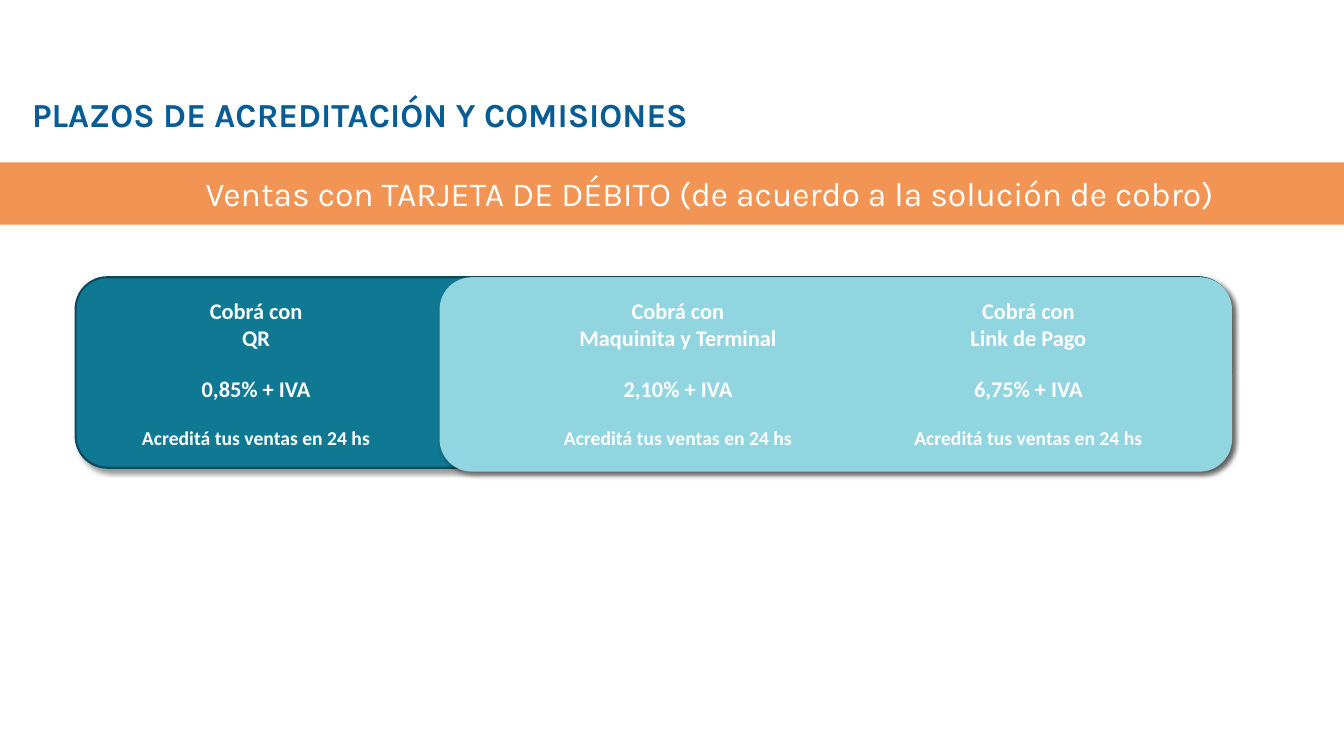
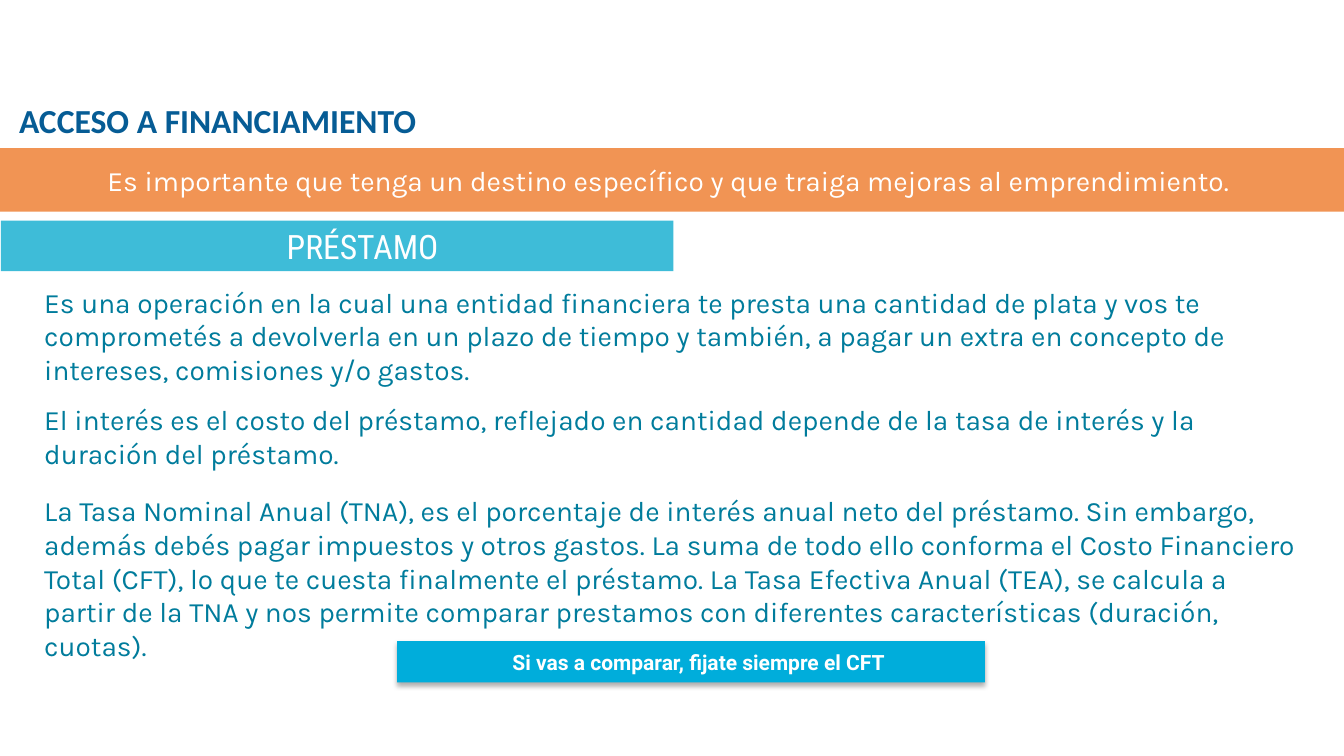
from dataclasses import dataclass

from lxml.etree import SubElement
from pptx import Presentation
from pptx.dml.color import RGBColor
from pptx.enum.shapes import MSO_SHAPE
from pptx.enum.text import MSO_ANCHOR, PP_ALIGN
from pptx.oxml.ns import qn
from pptx.util import Inches, Pt


@dataclass(frozen=True)
class Theme:
    white: str = "FFFFFF"
    navy: str = "065C95"
    orange: str = "F19454"
    teal: str = "0F7994"
    teal_edge: str = "104760"
    aqua: str = "90D5E0"
    turquoise: str = "3EBCD8"
    sky: str = "00ADDB"
    body_text: str = "007C9C"
    heading_font: str = "Karla"
    card_font: str = "Calibri"
    label_font: str = "Roboto Condensed"
    callout_font: str = "Roboto"
    title_size: int = 24
    body_size: int = 20
    card_size: int = 16
    callout_size: int = 15
    small_size: int = 14


class Deck:
    def __init__(self, theme):
        self.theme = theme
        self.presentation = Presentation()
        self.presentation.slide_width = Inches(13.33)
        self.presentation.slide_height = Inches(7.5)
        self.slide = None

    def new_slide(self):
        self.slide = self.presentation.slides.add_slide(self.presentation.slide_layouts[6])

    def panel(self, box, fill, kind=MSO_SHAPE.RECTANGLE, edge=None, shadow=None):
        shape = self.slide.shapes.add_shape(kind, *map(Inches, box))
        shape.fill.solid()
        shape.fill.fore_color.rgb = RGBColor.from_string(fill)
        if edge:
            shape.line.color.rgb = RGBColor.from_string(edge)
            shape.line.width = Pt(1.5)
        else:
            shape.line.fill.background()
        shape.shadow.inherit = False
        if shadow:
            self.add_shadow(shape, *shadow)
        return shape

    def add_shadow(self, shape, opacity, blur, distance, angle):
        effects = shape._element.spPr.find(qn("a:effectLst"))
        outer = SubElement(effects, qn("a:outerShdw"), blurRad=str(Pt(blur)),
                           dist=str(Pt(distance)), dir=str(angle * 60000),
                           algn="tl", rotWithShape="0")
        color = SubElement(outer, qn("a:srgbClr"), val="000000")
        SubElement(color, qn("a:alpha"), val=str(opacity * 1000))

    def text_box(self, box):
        return self.slide.shapes.add_textbox(*map(Inches, box))

    def set_text(self, shape, lines, font, color, bold=False, align=PP_ALIGN.CENTER,
                 anchor=MSO_ANCHOR.MIDDLE, left=0.1, right=0.1):
        frame = shape.text_frame
        frame.word_wrap = True
        frame.vertical_anchor = anchor
        frame.margin_left, frame.margin_right = Inches(left), Inches(right)
        for index, (text, size, space_before) in enumerate(lines):
            paragraph = frame.add_paragraph() if index else frame.paragraphs[0]
            paragraph.text = text
            paragraph.alignment = align
            if space_before:
                paragraph.space_before = Pt(space_before)
            paragraph.font.name = font
            paragraph.font.size = Pt(size)
            paragraph.font.bold = bold
            paragraph.font.color.rgb = RGBColor.from_string(color)

    def title(self, text, left, top, font):
        self.set_text(self.text_box((left, top, 12.52, 0.5)), [(text, self.theme.title_size, 0)],
                      font, self.theme.navy, bold=True, align=PP_ALIGN.LEFT)

    def band(self, text, top, height, size, **placement):
        band = self.panel((0, top, 13.33, height), self.theme.orange)
        self.set_text(band, [(text, size, 0)], self.theme.heading_font, self.theme.white, **placement)

    def card_panel(self, box, fill, edge=None):
        self.panel(box, fill, MSO_SHAPE.ROUNDED_RECTANGLE, edge, shadow=(40, 4, 3, 45))

    def fee(self, left, width, channel, rate):
        theme = self.theme
        lines = [("Cobrá con", theme.card_size, 0),
                 (channel, theme.card_size, 0),
                 (f"{rate} + IVA", theme.card_size, 17),
                 ("Acreditá tus ventas en 24 hs", theme.small_size, 17)]
        self.set_text(self.text_box((left, 2.9, width, 1.62)), lines, theme.card_font,
                      theme.white, bold=True, anchor=MSO_ANCHOR.TOP)

    def label(self, text, box):
        self.set_text(self.panel(box, self.theme.turquoise), [(text, self.theme.title_size, 0)],
                      self.theme.label_font, self.theme.white, left=0.6)

    def body(self, box, paragraphs):
        lines = [(text, self.theme.body_size, space) for text, space in paragraphs]
        self.set_text(self.panel(box, self.theme.white), lines, self.theme.heading_font,
                      self.theme.body_text, align=PP_ALIGN.LEFT, anchor=MSO_ANCHOR.TOP)

    def callout(self, text, box):
        shape = self.panel(box, self.theme.sky, shadow=(32, 3.5, 2.2, 90))
        self.set_text(shape, [(text, self.theme.callout_size, 0)], self.theme.callout_font,
                      self.theme.white, bold=True, left=0.25)


def add_fees_slide(deck):
    theme = deck.theme
    deck.new_slide()
    deck.card_panel((0.75, 2.75, 11.45, 1.89), theme.teal, theme.teal_edge)
    deck.card_panel((4.36, 2.75, 7.86, 1.93), theme.aqua)
    for left, width, channel, rate in [
        (1.3, 2.48, "QR", "0,85%"),
        (4.71, 4.03, "Maquinita y Terminal", "2,10%"),
        (8.96, 2.48, "Link de Pago", "6,75%"),
    ]:
        deck.fee(left, width, channel, rate)
    deck.band("Ventas con TARJETA DE DÉBITO (de acuerdo a la solución de cobro)",
              1.61, 0.62, theme.title_size, align=PP_ALIGN.LEFT, left=2.04)
    deck.title("PLAZOS DE ACREDITACIÓN Y COMISIONES", 0.22, 0.88, theme.heading_font)


def add_loan_slide(deck):
    theme = deck.theme
    deck.new_slide()
    deck.title("ACCESO A FINANCIAMIENTO", 0.09, 0.94, theme.card_font)
    deck.band("Es importante que tenga un destino específico y que traiga mejoras al emprendimiento.",
              1.47, 0.63, theme.body_size, right=0.16)
    deck.label("PRÉSTAMO", (0.01, 2.19, 6.67, 0.5))
    deck.body((0.34, 2.78, 12.67, 3.95), [
        ("Es una operación en la cual una entidad financiera te presta una cantidad de plata y vos te "
         "comprometés a devolverla en un plazo de tiempo y también, a pagar un extra en concepto de "
         "intereses, comisiones y/o gastos.", 0),
        ("El interés es el costo del préstamo, reflejado en cantidad depende de la tasa de interés y la "
         "duración del préstamo.", 12),
        ("La Tasa Nominal Anual (TNA), es el porcentaje de interés anual neto del préstamo. Sin embargo, "
         "además debés pagar impuestos y otros gastos. La suma de todo ello conforma el Costo Financiero "
         "Total (CFT), lo que te cuesta finalmente el préstamo. La Tasa Efectiva Anual (TEA), se calcula a "
         "partir de la TNA y nos permite comparar prestamos con diferentes características (duración, "
         "cuotas).", 17),
    ])
    deck.callout("Si vas a comparar, fijate siempre el CFT", (3.94, 6.36, 5.83, 0.41))


def main():
    deck = Deck(Theme())
    add_fees_slide(deck)
    add_loan_slide(deck)
    deck.presentation.save("out.pptx")


if __name__ == "__main__":
    main()
